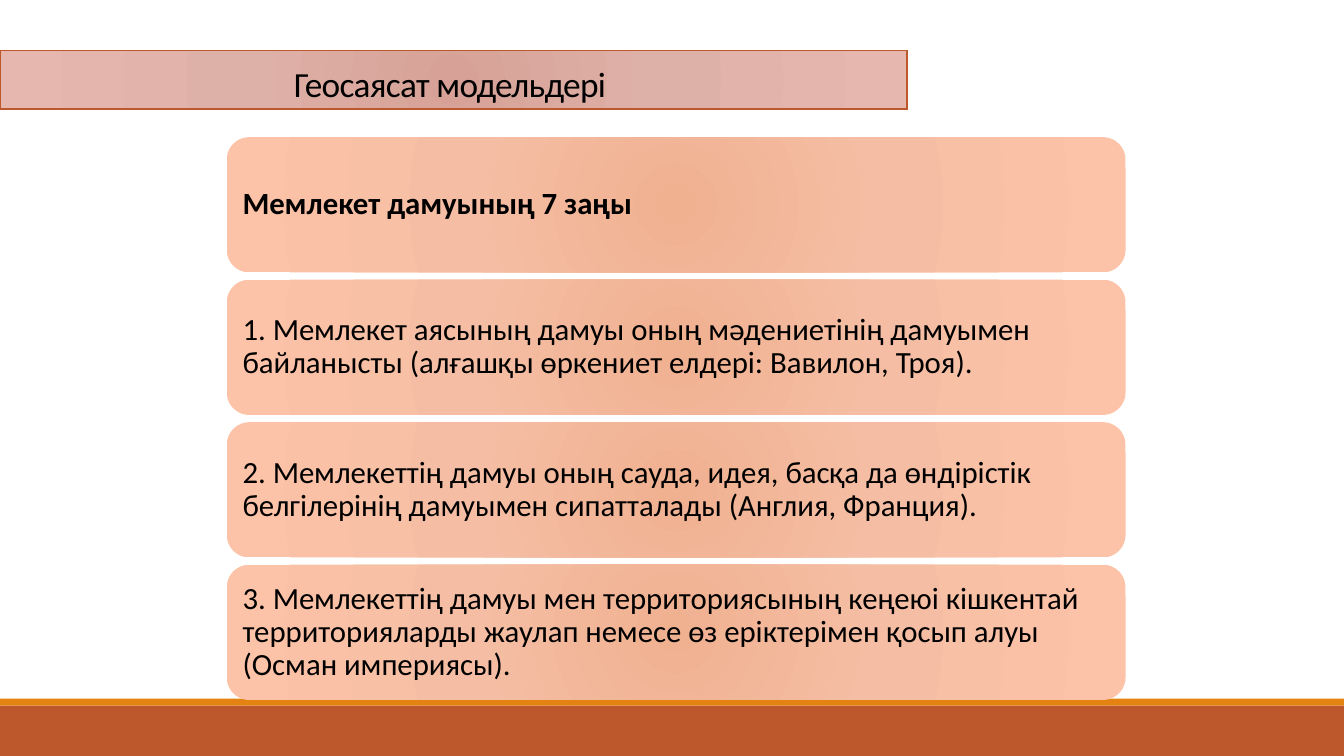
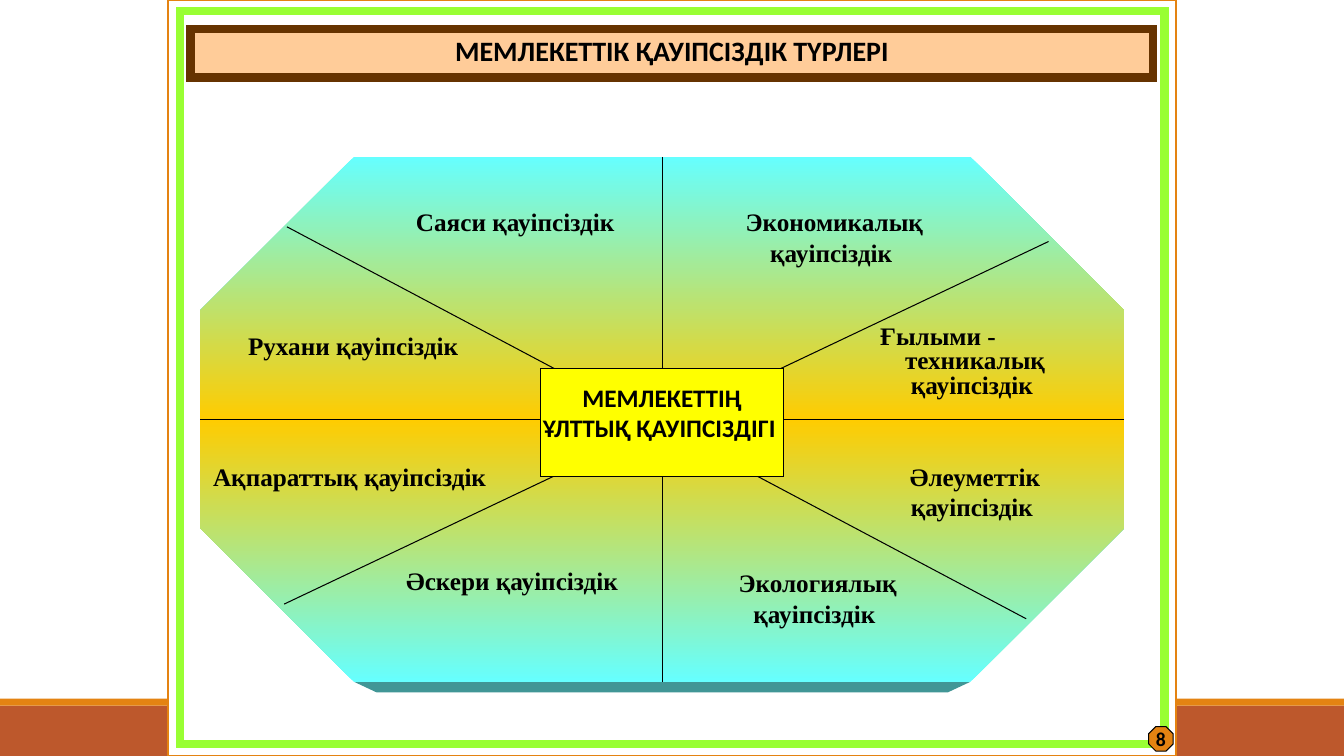
"""Build two slides on the laws of state growth and the types of state security."""

from lxml.etree import SubElement
from pptx import Presentation
from pptx.dml.color import RGBColor
from pptx.enum.shapes import MSO_CONNECTOR as Link, MSO_SHAPE as Shape
from pptx.enum.text import MSO_ANCHOR as Anchor, PP_ALIGN as Align
from pptx.oxml import parse_xml
from pptx.oxml.ns import nsdecls, qn
from pptx.util import Pt

BLACK = RGBColor(0, 0, 0)
WHITE = RGBColor(0xFF, 0xFF, 0xFF)
RUST = RGBColor(0xBD, 0x58, 0x2C)
ORANGE = RGBColor(0xE4, 0x83, 0x12)
LIME = RGBColor(0x99, 0xFF, 0x33)
PEACH = RGBColor(0xFF, 0xCC, 0x99)
BROWN = RGBColor(0x66, 0x33, 0x00)
YELLOW = RGBColor(0xFF, 0xFF, 0x00)
AQUA = RGBColor(0x66, 0xFF, 0xFF)
GOLD = RGBColor(0xFF, 0xCC, 0x00)
TEAL = RGBColor(0x41, 0x96, 0x96)
TITLE_STOPS = ((0, RGBColor(0xD7, 0xA1, 0x97)), (45, RGBColor(0xDE, 0xB1, 0xA8)),
               (100, RGBColor(0xE6, 0xB7, 0xAE)))
CARD_STOPS = ((0, RGBColor(0xF0, 0xB1, 0x91)), (45, RGBColor(0xF5, 0xBE, 0xA4)),
              (100, RGBColor(0xFD, 0xC3, 0xA8)))
WHEEL_STOPS = ((0, AQUA), (50, GOLD), (100, AQUA))
RADIAL = '<a:path path="circle"><a:fillToRect l="50000" t="50000" r="50000" b="50000"/></a:path>'
DOWNWARD = '<a:lin ang="5400000" scaled="0"/>'

SANS = "Calibri"
SERIF = "Times New Roman"
WIDTH, HEIGHT = 960, 540
CORNER = 0.293

LAWS = (
    "Мемлекет дамуының 7 заңы",
    "1. Мемлекет аясының дамуы оның мәдениетінің дамуымен байланысты "
    "(алғашқы өркениет елдері: Вавилон, Троя).",
    "2. Мемлекеттің дамуы оның сауда, идея, басқа да өндірістік "
    "белгілерінің дамуымен сипатталады (Англия, Франция).",
    "3. Мемлекеттің дамуы мен территориясының кеңеюі кішкентай территорияларды "
    "жаулап немесе өз еріктерімен қосып алуы (Осман империясы).",
)
SECTORS = (
    ("Саяси қауіпсіздік", 269, 144, 198, 1),
    ("Экономикалық қауіпсіздік ", 491, 144, 210, 1),
    ("Рухани қауіпсіздік ", 155.5, 232.5, 198, 1),
    ("Ақпараттық қауіпсіздік ", 138, 326, 228, 1),
    ("Әскери қауіпсіздік ", 269, 403, 198, 0.9),
    ("Экологиялық қауіпсіздік ", 485, 402, 198, 1),
    ("Әлеуметтік қауіпсіздік ", 597.5, 326, 198, 1),
)


class Painter:
    """Hold the shared style and draw on the current slide."""

    def __init__(self):
        """Start an empty widescreen deck."""
        self.deck = Presentation()
        self.deck.slide_width, self.deck.slide_height = Pt(WIDTH), Pt(HEIGHT)
        self.slide = None

    def page(self):
        """Add a blank page with the two footer bands."""
        self.slide = self.deck.slides.add_slide(self.deck.slide_layouts[6])
        self.block(0, 504, WIDTH, 36, RUST)
        self.block(0, 499, WIDTH, 5, ORANGE)

    def style(self, shape, fill=None, line=None, weight=1):
        """Give a shape its solid fill and mitred outline."""
        shape.shadow.inherit = False
        if fill is None:
            shape.fill.background()
        else:
            shape.fill.solid()
            shape.fill.fore_color.rgb = fill
        if line is None:
            shape.line.fill.background()
        else:
            shape.line.color.rgb = line
            shape.line.width = Pt(weight)
            SubElement(shape.line._get_or_add_ln(), qn("a:miter"), lim="800000")

    def block(self, left, top, width, height, fill=None, line=None, weight=1, kind=Shape.RECTANGLE):
        """Draw a preset shape."""
        shape = self.slide.shapes.add_shape(kind, Pt(left), Pt(top), Pt(width), Pt(height))
        self.style(shape, fill, line, weight)
        if kind == Shape.OCTAGON:
            shape.adjustments[0] = CORNER
        return shape

    def gradient(self, shape, stops, direction):
        """Replace the fill of a shape with a gradient."""
        marks = "".join(f'<a:gs pos="{spot * 1000}"><a:srgbClr val="{colour}"/></a:gs>'
                        for spot, colour in stops)
        properties = shape._element.spPr
        old = properties.find(qn("a:noFill"))
        properties.replace(old, parse_xml(
            f'<a:gradFill {nsdecls("a")} rotWithShape="1"><a:gsLst>{marks}</a:gsLst>'
            f'{direction}</a:gradFill>'))

    def caption(self, shape, text, size, font=SANS, bold=True, align=Align.CENTER, spacing=1,
                anchor=Anchor.MIDDLE, insets=(7.2, 3.6, 7.2, 3.6), wrap=True):
        """Put the first paragraph into a shape and return its run."""
        frame = shape.text_frame
        frame.word_wrap = wrap
        frame.vertical_anchor = anchor
        frame.margin_left, frame.margin_top, frame.margin_right, frame.margin_bottom = map(Pt, insets)
        return self.paragraph(frame.paragraphs[0], text, size, font, bold, align, spacing)

    def paragraph(self, para, text, size, font, bold, align, spacing):
        """Fill one paragraph with a styled run."""
        para.alignment = align
        para.line_spacing = spacing
        span = para.add_run()
        span.text = text
        span.font.name, span.font.size, span.font.bold = font, Pt(size), bold
        span.font.color.rgb = BLACK
        return span

    def label(self, text, left, top, width, spacing=1, align=Align.CENTER):
        """Add a serif sector label and return its box."""
        box = self.slide.shapes.add_textbox(Pt(left), Pt(top), Pt(width), Pt(29))
        self.caption(box, text, 18, SERIF, align=align, spacing=spacing, anchor=Anchor.TOP)
        return box

    def line(self, start_x, start_y, end_x, end_y):
        """Draw a thin black divider."""
        link = self.slide.shapes.add_connector(
            Link.STRAIGHT, Pt(start_x), Pt(start_y), Pt(end_x), Pt(end_y))
        link.line.color.rgb = BLACK
        link.line.width = Pt(0.75)
        SubElement(link._element.spPr, qn("a:effectLst"))

    def outline(self, points, fill):
        """Draw a closed freeform."""
        corners = [(Pt(x), Pt(y)) for x, y in points]
        builder = self.slide.shapes.build_freeform(*corners[0], scale=1.0)
        builder.add_line_segments(corners[1:], close=True)
        self.style(builder.convert_to_shape(), fill)


def laws_page(painter):
    """Draw the laws of state growth."""
    painter.page()
    title = painter.block(0, 36, 648, 42, line=RUST)
    painter.gradient(title, TITLE_STOPS, RADIAL)
    span = painter.caption(title, "Геосаясат модельдері ", 25.2, bold=False,
                           spacing=0.85, anchor=Anchor.BOTTOM)
    span._r.get_or_add_rPr().set("spc", "-50")
    for index, law in enumerate(LAWS):
        card = painter.block(162, 98 + index * 101.8, 642, 96.6, kind=Shape.ROUNDED_RECTANGLE)
        painter.gradient(card, CARD_STOPS, RADIAL)
        painter.caption(card, law, 22, bold=index == 0, align=Align.LEFT,
                        spacing=0.9, insets=(6.6,) * 4)


def security_page(painter):
    """Draw the wheel of security types."""
    painter.page()
    painter.block(120, 0, 720, HEIGHT, WHITE, ORANGE, 1.25)
    painter.block(128.8, 8, 703, 523.5, line=LIME, weight=6)
    title = painter.block(136.2, 20.8, 687.6, 34.5, PEACH, BROWN, 6)
    painter.caption(title, "МЕМЛЕКЕТТІК ҚАУІПСІЗДІК ТҮРЛЕРІ", 20, spacing=0.8)
    badge = painter.block(820.5, 519, 17.5, 17.5, ORANGE, BLACK, 0.75, Shape.OCTAGON)
    painter.caption(badge, "8", 14, insets=(0,) * 4, wrap=False)

    left, top, width, height = 143, 112, 660, 375
    right, bottom, cut = left + width, top + height, CORNER * height
    middle_x, middle_y = left + width / 2, top + height / 2
    painter.outline(((left + cut, bottom), (right - cut, bottom),
                     (right - cut - 16, bottom + 7.5), (left + cut + 16, bottom + 7.5)), TEAL)
    wheel = painter.block(left, top, width, height, kind=Shape.OCTAGON)
    painter.gradient(wheel, WHEEL_STOPS, DOWNWARD)
    for ends in ((left, middle_y, right, middle_y), (middle_x, top, middle_x, bottom),
                 (203, 431.5, 749, 172.5), (205, 162, 733, 442)):
        painter.line(*ends)
    for sector in SECTORS:
        painter.label(*sector)
    science = painter.label("Ғылыми -", 597.5, 229.5, 198, 0.8, Align.LEFT)
    first = science.text_frame.paragraphs[0]._p.get_or_add_pPr()
    first.set("marL", str(Pt(24)))
    painter.paragraph(science.text_frame.add_paragraph(), "техникалық қауіпсіздік ",
                      18, SERIF, True, Align.CENTER, 0.8)
    core = painter.block(middle_x - 87, 263.5, 174, 77, YELLOW, BLACK, 0.75)
    painter.caption(core, "МЕМЛЕКЕТТІҢ ҰЛТТЫҚ ҚАУІПСІЗДІГІ ", 18,
                    anchor=Anchor.TOP, insets=(0, 9.5, 0, 0))


def main():
    """Build and save the deck."""
    painter = Painter()
    laws_page(painter)
    security_page(painter)
    painter.deck.save("out.pptx")


if __name__ == "__main__":
    main()
